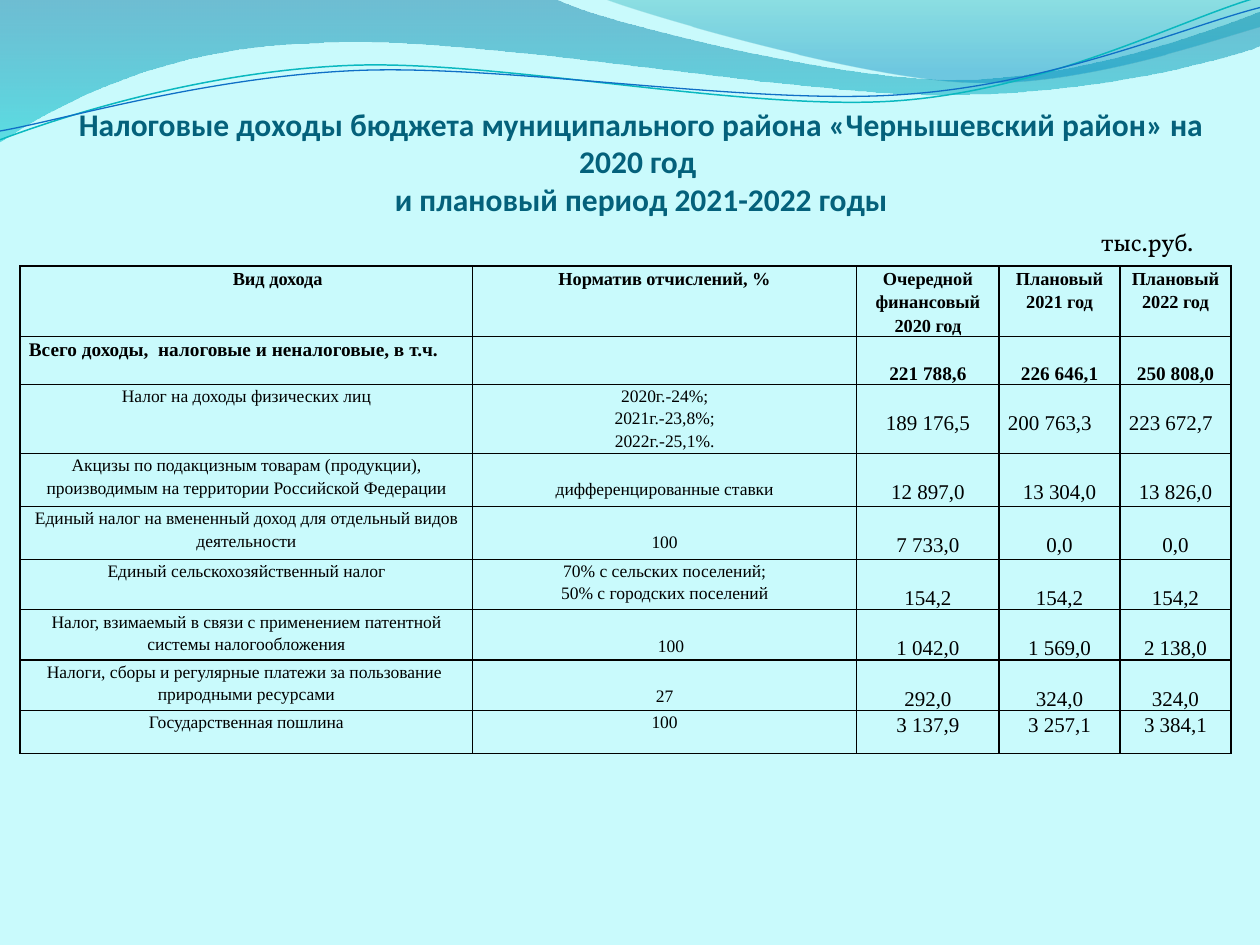
from pptx import Presentation, util as u
from pptx.dml.color import RGBColor
from pptx.enum import text as t
from pptx.oxml import parse_xml
from pptx.oxml.ns import nsdecls, qn
from lxml import etree

WIDE, HIGH = 10, 7.5
SERIF = "Times New Roman"
MID, LEFT = t.PP_ALIGN.CENTER, t.PP_ALIGN.LEFT
DROP, TAIL = 0.19, -0.05

BANDS = [
    ([(0, 0), (4.4, -0.01), (4.76, 0.17, 6.64, 0.63, 7.58, 0.63),
      (8.53, 0.63, 9.58, 0.26, 10, 0.09), (10.01, 0.36),
      (9.83, 0.44, 8.7, 0.76, 7.46, 0.75), (6.22, 0.75, 3.82, 0.28, 2.57, 0.34),
      (1.29, 0.36, 0.46, 0.83, -0.01, 1.13), (0, 0)],
     [(0, "0074A1", 45), (1, "00C6CF", 55)]),
    ([(4.79, -0.01), (5.09, 0.11, 6.82, 0.62, 7.69, 0.65),
      (8.56, 0.69, 9.61, 0.32, 10, 0.21), (10, 0), (4.79, -0.01)],
     [(0, "00A1A9", 30), (0.8, "008BBF", 45)]),
]
LINES = [
    ([(0, 1.11), (0.48, 0.93, 1.58, 0.57, 2.77, 0.52),
      (3.95, 0.47, 5.93, 0.89, 7.13, 0.8), (8.33, 0.71, 9.38, 0.15, 9.98, -0.02)],
     "0AB8BF", 0.85),
    ([(0, 1.04), (0.47, 0.96, 1.64, 0.61, 2.83, 0.56),
      (4.03, 0.51, 5.97, 0.84, 7.17, 0.75), (8.36, 0.67, 9.41, 0.21, 10, 0.06)],
     "0F6FC6", 0.75),
]

COLS = [3.59, 3.05, 1.13, 0.96, 0.88]
ROWS = [0.56, 0.38, 0.55, 0.42, 0.42, 0.4, 0.4, 0.4, 0.34]
HEAD = ["Вид дохода", "Норматив отчислений, %", "Очередной финансовый 2020 год",
        "Плановый 2021 год", "Плановый 2022 год"]
BODY = [
    ["Всего доходы,  налоговые и неналоговые, в т.ч.", "",
     "221 788,6", "226 646,1", "250 808,0"],
    ["Налог на доходы физических лиц", "2020г.-24%;\n2021г.-23,8%;\n2022г.-25,1%.",
     "189 176,5", "200 763,3", "223 672,7"],
    ["Акцизы по подакцизным товарам (продукции), производимым на территории "
     "Российской Федерации", "дифференцированные ставки",
     "12 897,0", "13 304,0", "13 826,0"],
    ["Единый налог на вмененный доход для отдельный видов деятельности", "100",
     "7 733,0", "0,0", "0,0"],
    ["Единый сельскохозяйственный налог",
     "70% с сельских поселений;\n50% с городских поселений",
     "154,2", "154,2", "154,2"],
    ["Налог, взимаемый в связи с применением патентной системы налогообложения",
     "100", "1 042,0", "1 569,0", "2 138,0"],
    ["Налоги, сборы и регулярные платежи за пользование \vприродными ресурсами",
     "27", "292,0", "324,0", "324,0"],
    ["Государственная пошлина", "100", "3 137,9", "3 257,1", "3 384,1"],
]


def tint(code):
    return RGBColor.from_string(code)


def style(par, face, size, code, bold=False, align=MID):
    par.alignment = align
    font = par.font
    font.name, font.size, font.bold = face, u.Pt(size), bold
    font.color.rgb = tint(code)


def bend(shape, steps):
    nodes = iter(list(shape._element.iter(qn("a:lnTo"))))
    for step in steps[1:]:
        first = next(nodes)
        if len(step) == 6:
            first.tag = qn("a:cubicBezTo")
            for node in (next(nodes), next(nodes)):
                first.append(node[0])
                node.getparent().remove(node)


def outline(slide, box, steps, close):
    left, top, wide, high = box
    spots = [(u.Inches(left + x * wide / WIDE), u.Inches(top + y * high / HIGH))
             for step in steps for x, y in zip(step[::2], step[1::2])]
    build = slide.shapes.build_freeform(*spots[0])
    build.add_line_segments(spots[1:], close=close)
    shape = build.convert_to_shape()
    bend(shape, steps)
    shape.shadow.inherit = False
    return shape


def waves(slide, box):
    for steps, stops in BANDS:
        shape = outline(slide, box, steps, True)
        shape.line.fill.background()
        shape.fill.gradient()
        shape.fill.gradient_angle = 270
        for stop, (place, code, _) in zip(shape.fill.gradient_stops, stops):
            stop.position = place
            stop.color.rgb = tint(code)
        nodes = list(shape._element.spPr.iter(qn("a:srgbClr")))
        for node, (_, _, alpha) in zip(nodes, stops):
            etree.SubElement(node, qn("a:alpha")).set("val", str(alpha * 1000))
    for steps, code, width in LINES:
        shape = outline(slide, box, steps, False)
        shape.fill.background()
        shape.line.color.rgb = tint(code)
        shape.line.width = u.Pt(width)


def label(slide, box, words, anchor, pad, *look):
    frame = slide.shapes.add_textbox(*map(u.Inches, box)).text_frame
    frame.word_wrap = True
    frame.vertical_anchor = anchor
    frame.margin_left = frame.margin_right = u.Inches(pad)
    frame.margin_bottom = 0
    frame.text = words
    style(frame.paragraphs[0], *look)


def edge(cell):
    props = cell._tc.get_or_add_tcPr()
    for i, side in enumerate(("lnL", "lnR", "lnT", "lnB")):
        props.insert(i, parse_xml(
            f'<a:{side} {nsdecls("a")} w="12700"><a:solidFill>'
            f'<a:srgbClr val="000000"/></a:solidFill></a:{side}>'))


def fill(cell, words, size, bold, align, pad, drop):
    cell.fill.background()
    edge(cell)
    cell.margin_left = cell.margin_right = u.Inches(pad)
    cell.margin_top, cell.margin_bottom = u.Inches(drop), u.Inches(TAIL)
    cell.text = words
    for par in cell.text_frame.paragraphs:
        style(par, SERIF, size, "000000", bold, align)
        par.line_spacing = 1.15


def budget(slide, box):
    wide, high = box[2:]
    table = slide.shapes.add_table(len(ROWS), len(COLS),
                                   *map(u.Inches, box)).table
    table.first_row = table.horz_banding = False
    for col, part in zip(table.columns, COLS):
        col.width = u.Inches(wide * part / sum(COLS))
    for row, part in zip(table.rows, ROWS):
        row.height = u.Inches(high * part / sum(ROWS))
    for c, words in enumerate(HEAD):
        fill(table.cell(0, c), words, 10.5, True, MID, 0.03, 0)
    table.cell(0, 0).margin_left = u.Inches(0.53)
    last = len(BODY)
    for r, line in enumerate(BODY, 1):
        for c, words in enumerate(line):
            total = r == 1
            size = 11 if total else 12 if c > 1 else 10
            flush = (r, c) in ((1, 0), (2, 3), (2, 4))
            low = c > 0 and r < last and "\n" not in words
            fill(table.cell(r, c), words, size, total, LEFT if flush else MID,
                 0.07, DROP if low else 0)
    table.cell(6, 1).margin_left = u.Inches(0.17)


def main():
    deck = Presentation()
    deck.slide_width, deck.slide_height = u.Inches(WIDE), u.Inches(HIGH)
    slide = deck.slides.add_slide(deck.slide_layouts[6])
    slide.background.fill.solid()
    slide.background.fill.fore_color.rgb = tint("C9FAFC")
    waves(slide, (0, 0, WIDE, HIGH))
    label(slide, (0.55, 1.02, 9.08, 0.71),
          "Налоговые доходы бюджета муниципального района «Чернышевский район» "
          "на 2020 год \vи плановый период 2021-2022 годы",
          t.MSO_ANCHOR.BOTTOM, 0, "Calibri", 18, "04617B", True)
    budget(slide, (0.16, 2.11, sum(COLS), sum(ROWS)))
    label(slide, (8.44, 1.78, 1.33, 0.23), "тыс.руб.",
          t.MSO_ANCHOR.MIDDLE, 0.1, "Vollkorn", 14, "000000")
    deck.save("out.pptx")


if __name__ == "__main__":
    main()
